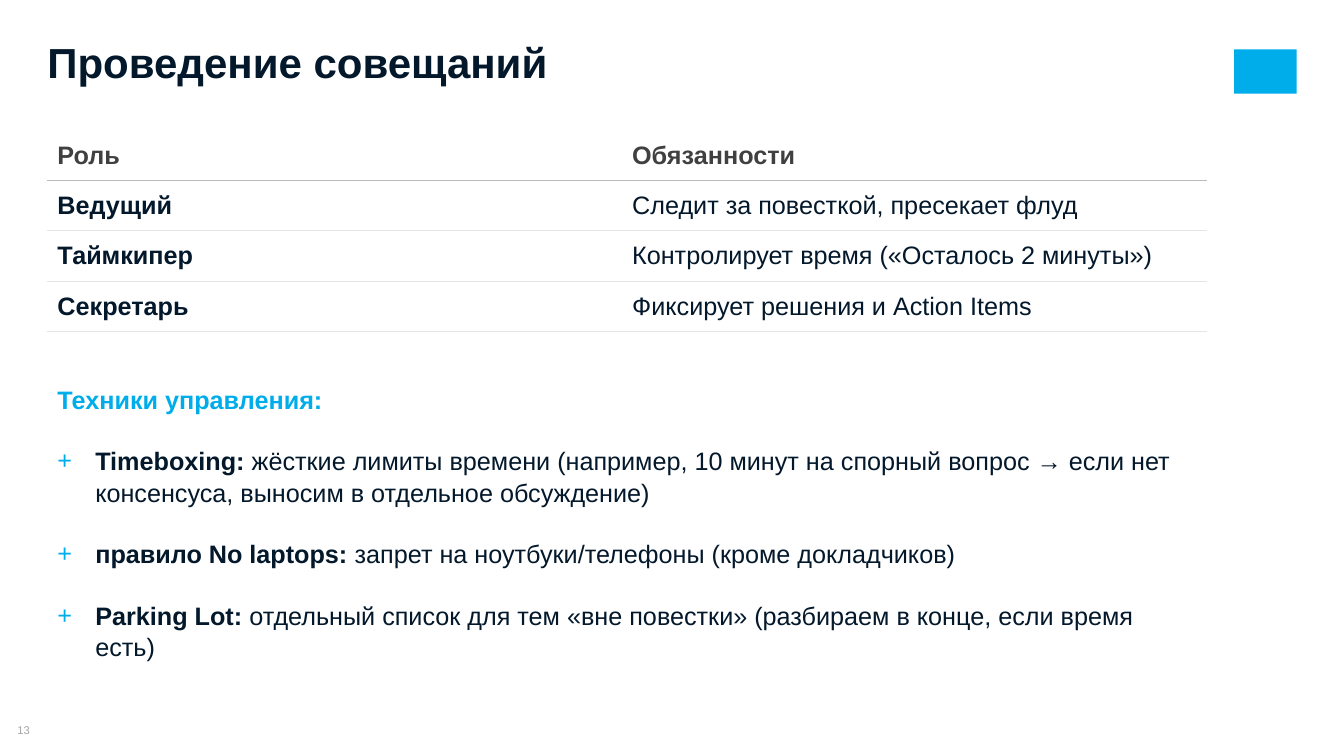
from dataclasses import dataclass

from lxml import etree
from pptx import Presentation
from pptx import util as u
from pptx.dml.color import RGBColor
from pptx.enum import shapes, text
from pptx.oxml import ns


@dataclass(frozen=True)
class Theme:
    """Colours, font and type sizes of the deck."""
    ink: str = "03182B"
    accent: str = "00ADEB"
    head: str = "404040"
    mute: str = "A6A6A6"
    rule: str = "BBBBBB"
    hair: str = "E5E5E5"
    paper: str = "FFFFFF"
    font: str = "Arial"
    title: int = 30
    body: int = 18
    small: int = 8


THEME = Theme()
ROLES = [
    ("Роль", "Обязанности"),
    ("Ведущий", "Следит за повесткой, пресекает флуд"),
    ("Таймкипер", "Контролирует время («Осталось 2 минуты»)"),
    ("Секретарь", "Фиксирует решения и Action Items"),
]
RULES = [
    ("Timeboxing: ", "жёсткие лимиты времени (например, 10 минут на спорный вопрос "
     "→ если нет консенсуса, выносим в отдельное обсуждение)"),
    ("правило No laptops: ", "запрет на ноутбуки/телефоны (кроме докладчиков)"),
    ("Parking Lot: ", "отдельный список для тем «вне повестки» "
     "(разбираем в конце, если время есть)"),
]


def put(item, vals):
    """Set each attribute of item from a dict."""
    for name, val in vals.items():
        setattr(item, name, val)


def place(item, box):
    """Move item to a box of left, top, width and height in inches."""
    put(item, dict(zip(("left", "top", "width", "height"), map(u.Inches, box))))


def frame(item, pad=0.0, **more):
    """Format a text frame or cell with equal margins."""
    sides = ("margin_left", "margin_top", "margin_right", "margin_bottom")
    put(item, {**dict.fromkeys(sides, u.Inches(pad)), "word_wrap": True, **more})


def write(para, words, size, tint, bold=False):
    """Add one formatted run to a paragraph."""
    run = para.add_run()
    run.text = words
    put(run.font, {"name": THEME.font, "size": u.Pt(size), "bold": bold})
    run.font.color.rgb = RGBColor.from_string(tint)


def node(top, tag, **vals):
    """Append a drawing element to its parent."""
    return etree.SubElement(top, ns.qn("a:" + tag), vals)


def edge(cell, side, tint):
    """Draw a thin border on one side of a cell."""
    line = node(cell._tc.get_or_add_tcPr(), side, w=str(u.Pt(0.75)))
    node(node(line, "solidFill"), "srgbClr", val=tint)


def add_head(slide, box):
    """Fill the title placeholder."""
    title = slide.shapes.title
    place(title, box)
    frame(title.text_frame, vertical_anchor=text.MSO_ANCHOR.TOP,
          auto_size=text.MSO_AUTO_SIZE.NONE)
    para = title.text_frame.paragraphs[0]
    put(para, {"alignment": text.PP_ALIGN.LEFT, "line_spacing": 0.8})
    write(para, "Проведение совещаний", THEME.title, THEME.ink, True)


def add_mark(slide, box):
    """Put a plain block in the corner."""
    mark = slide.shapes.add_shape(shapes.MSO_SHAPE.RECTANGLE, *map(u.Inches, box))
    mark.shadow.inherit = False
    mark.fill.solid()
    mark.fill.fore_color.rgb = RGBColor.from_string(THEME.accent)
    mark.line.fill.background()


def add_roles(slide, box):
    """Draw the table of roles and duties."""
    grid = slide.shapes.add_table(len(ROLES), 2, *map(u.Inches, box)).table
    put(grid, {"first_row": False, "horz_banding": False})
    for col, wide in zip(grid.columns, (5.7, box[2] - 5.7)):
        col.width = u.Inches(wide)
    for r, row in enumerate(ROLES):
        for c, words in enumerate(row):
            cell = grid.cell(r, c)
            frame(cell, 0.1, vertical_anchor=text.MSO_ANCHOR.MIDDLE)
            if r:
                edge(cell, "lnT", THEME.rule if r == 1 else THEME.hair)
            edge(cell, "lnB", THEME.hair if r else THEME.rule)
            cell.fill.solid()
            cell.fill.fore_color.rgb = RGBColor.from_string(THEME.paper)
            write(cell.text_frame.paragraphs[0], words, THEME.body,
                  THEME.ink if r else THEME.head, r == 0 or c == 0)


def add_rules(slide, box):
    """Fill the body placeholder with a heading and a plus-marked list."""
    body = slide.placeholders[1]
    place(body, box)
    area = body.text_frame
    frame(area, 0.1, margin_top=u.Inches(0.05), margin_bottom=u.Inches(0.05),
          vertical_anchor=text.MSO_ANCHOR.TOP, auto_size=text.MSO_AUTO_SIZE.NONE)
    para = area.paragraphs[0]
    put(para, {"line_spacing": 1.04, "space_before": u.Pt(0)})
    props = para._p.get_or_add_pPr()
    put(props, {"marL": 0, "indent": 0})
    node(props, "buNone")
    write(para, "Техники управления:", THEME.body, THEME.accent, True)
    for name, words in RULES:
        para = area.add_paragraph()
        put(para, {"line_spacing": 1.04, "space_before": u.Pt(21.5)})
        props = para._p.get_or_add_pPr()
        put(props, {"marL": u.Inches(0.31), "indent": u.Inches(-0.31)})
        node(node(props, "buClr"), "srgbClr", val=THEME.accent)
        node(props, "buFont", typeface=THEME.font)
        node(props, "buChar", char="+")
        write(para, name, THEME.body, THEME.ink, True)
        write(para, words, THEME.body, THEME.ink)


def add_page(slide, box):
    """Write the page number."""
    area = slide.shapes.add_textbox(*map(u.Inches, box)).text_frame
    frame(area, vertical_anchor=text.MSO_ANCHOR.MIDDLE)
    para = area.paragraphs[0]
    para.alignment = text.PP_ALIGN.CENTER
    write(para, "13", THEME.small, THEME.mute)


def main():
    """Build and save the slide."""
    deck = Presentation()
    put(deck, {"slide_width": u.Inches(13.33), "slide_height": u.Inches(7.5)})
    slide = deck.slides.add_slide(deck.slide_layouts[1])
    left, wide = 0.47, 11.5
    add_mark(slide, (12.24, 0.49, 0.62, 0.44))
    add_page(slide, (0, 7.18, left, 0.13))
    add_head(slide, (left, 0.46, 10.51, 0.41))
    add_roles(slide, (left, 1.29, wide, 0.49 * len(ROLES)))
    add_rules(slide, (left, 3.75, wide, 2.83))
    deck.save("out.pptx")


if __name__ == "__main__":
    main()
